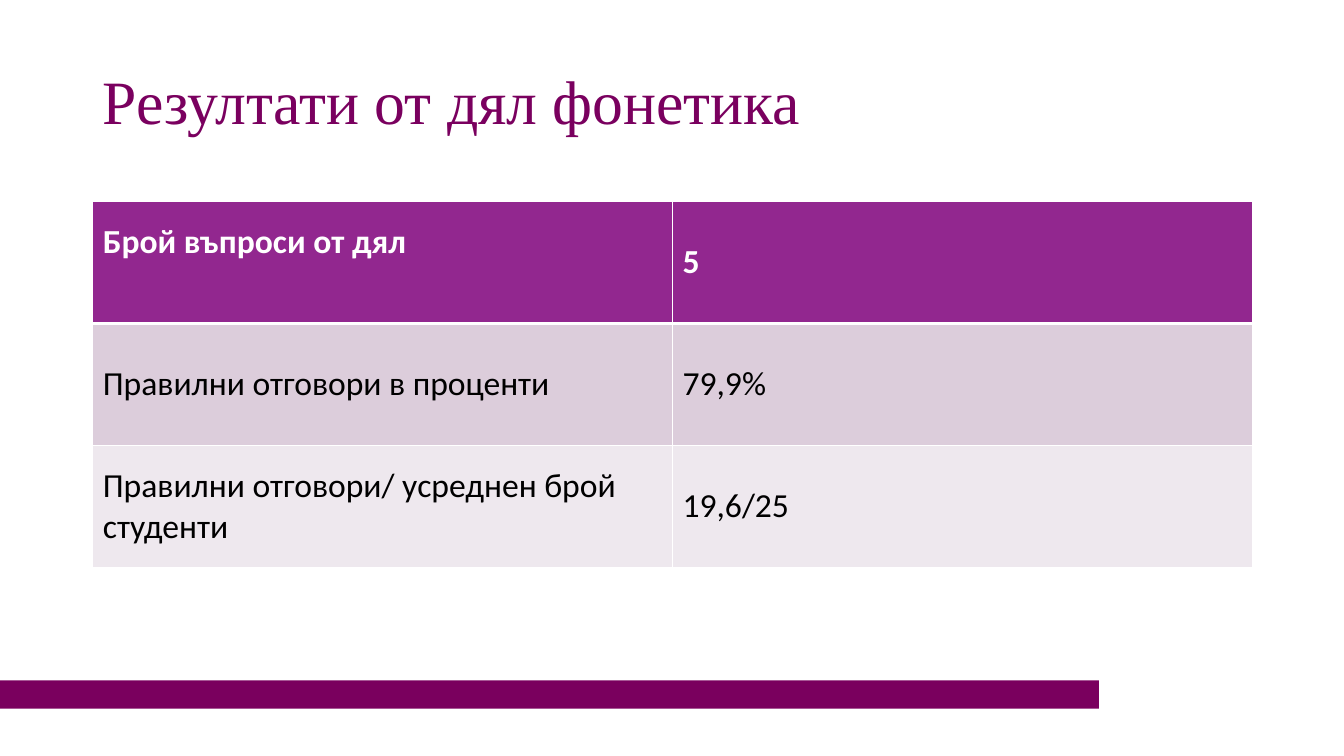
from lxml import etree
from pptx import Presentation
from pptx.dml.color import RGBColor
from pptx.enum.shapes import MSO_SHAPE
from pptx.enum.text import MSO_ANCHOR
from pptx.oxml.ns import qn
from pptx.util import Inches, Pt

TITLE = "Резултати от дял фонетика"
RESULTS = [
    ("Брой въпроси от дял", "5"),
    ("Правилни отговори в проценти", "79,9%"),
    ("Правилни отговори/ усреднен брой студенти", "19,6/25"),
]
COLORS = {
    "bar": "7A005E", "title": "7A005F", "header": "92278F",
    "odd": "DCCDDB", "even": "EEE8EE",
    "white": "FFFFFF", "black": "000000",
}
ROW_STYLES = [("header", "white"), ("odd", "black"), ("even", "black")]

# Layout in inches
WIDTH, HEIGHT = 13.33, 7.5
LEFT, CONTENT_WIDTH = 0.92, 11.5
TITLE_TOP, TITLE_HEIGHT = 0.31, 1.45
TABLE_TOP, ROW_HEIGHT = 2, 1.21
BAR_TOP, BAR_WIDTH, BAR_HEIGHT = 0.9 * HEIGHT, 10.9, 0.28
HEADER_LIFT = 0.4


def color(name):
    return RGBColor.from_string(COLORS[name])


def write(frame, text, size=24, font="Calibri", ink="black", bold=False, spacing=1.0):
    frame.word_wrap = True
    paragraph = frame.paragraphs[0]
    paragraph.line_spacing = spacing
    run = paragraph.add_run()
    run.text = text
    run.font.size = Pt(size)
    run.font.name = font
    run.font.bold = bold
    run.font.color.rgb = color(ink)


def add_borders(cell, bottom_width=1, top_width=1):
    properties = cell._tc.get_or_add_tcPr()
    widths = {"a:lnL": 1, "a:lnR": 1, "a:lnT": top_width, "a:lnB": bottom_width}
    for position, (side, width) in enumerate(widths.items()):
        line = etree.Element(qn(side), w=str(Pt(width)))
        fill = etree.SubElement(line, qn("a:solidFill"))
        etree.SubElement(fill, qn("a:srgbClr"), val=COLORS["white"])
        properties.insert(position, line)


presentation = Presentation()
presentation.slide_width = Inches(WIDTH)
presentation.slide_height = Inches(HEIGHT)
slide = presentation.slides.add_slide(presentation.slide_layouts[6])

# Bottom bar
bar = slide.shapes.add_shape(MSO_SHAPE.RECTANGLE, 0, Inches(BAR_TOP),
                             Inches(BAR_WIDTH), Inches(BAR_HEIGHT))
bar.shadow.inherit = False
bar.fill.solid()
bar.fill.fore_color.rgb = color("bar")
bar.line.fill.background()

# Title
title = slide.shapes.add_textbox(Inches(LEFT), Inches(TITLE_TOP),
                                 Inches(CONTENT_WIDTH), Inches(TITLE_HEIGHT))
title.text_frame.vertical_anchor = MSO_ANCHOR.MIDDLE
write(title.text_frame, TITLE, size=44, font="Times New Roman", ink="title", spacing=0.9)

# Results table
table = slide.shapes.add_table(len(RESULTS), len(RESULTS[0]), Inches(LEFT), Inches(TABLE_TOP),
                               Inches(CONTENT_WIDTH), Inches(ROW_HEIGHT * len(RESULTS))).table
for row, (texts, (fill, ink)) in enumerate(zip(RESULTS, ROW_STYLES)):
    table.rows[row].height = Inches(ROW_HEIGHT)
    for column, text in enumerate(texts):
        cell = table.cell(row, column)
        cell.vertical_anchor = MSO_ANCHOR.MIDDLE
        cell.fill.solid()
        cell.fill.fore_color.rgb = color(fill)
        add_borders(cell, bottom_width=3 if row == 0 else 1, top_width=3 if row == 1 else 1)
        write(cell.text_frame, text, ink=ink, bold=row == 0)

# The first heading sits above the middle of its cell
heading = table.cell(0, 0)
heading.margin_bottom += Inches(HEADER_LIFT)

presentation.save("out.pptx")
